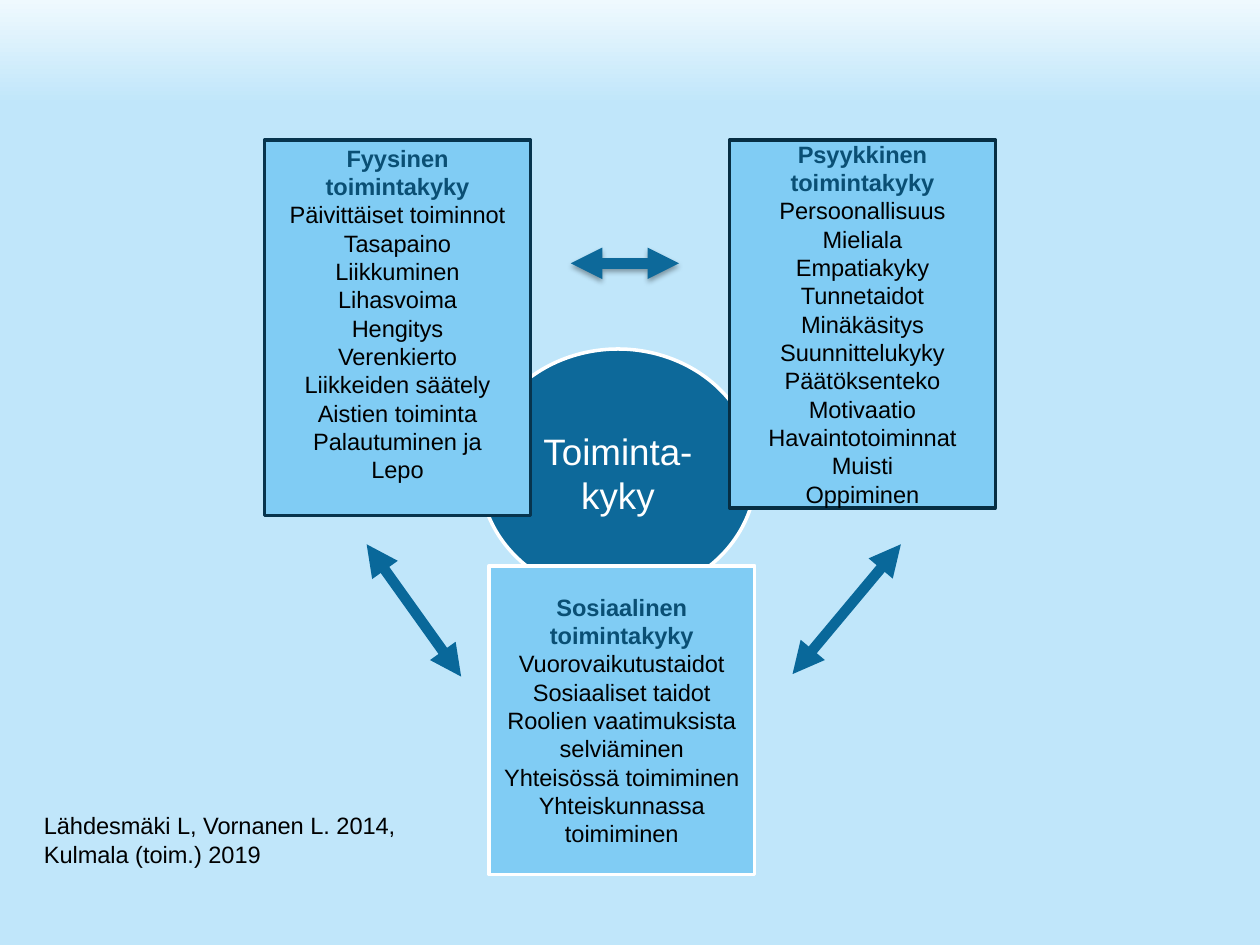
from lxml import etree
from pptx import Presentation
from pptx.dml.color import RGBColor
from pptx.enum.shapes import MSO_CONNECTOR, MSO_SHAPE
from pptx.enum.text import MSO_ANCHOR, MSO_AUTO_SIZE, PP_ALIGN
from pptx.oxml.ns import qn
from pptx.util import Inches, Pt

CIRCLE = MSO_SHAPE.FLOWCHART_CONNECTOR
BOX = MSO_SHAPE.FLOWCHART_PROCESS
STRAIGHT = MSO_CONNECTOR.STRAIGHT
MIDDLE = MSO_ANCHOR.MIDDLE
CENTER = PP_ALIGN.CENTER
LEFT = PP_ALIGN.LEFT
FIT_SHAPE = MSO_AUTO_SIZE.SHAPE_TO_FIT_TEXT

FONT = "Arial"
BODY_SIZE = 13.5
COLORS = {
    "sky_top": "EFF9FE",
    "sky": "C0E6FA",
    "circle": "0D699A",
    "arrow": "09689A",
    "box": "80CCF4",
    "navy": "07344D",
    "dark_navy": "062E43",
    "heading": "0A4F74",
    "white": "FFFFFF",
    "black": "000000",
}


def rgb(name):
    return RGBColor.from_string(COLORS[name])


def write_lines(tf, lines, size, color, align, heading=False):
    """Write one paragraph per line; a heading makes the first one bold."""
    for i, line in enumerate(lines):
        p = tf.paragraphs[0] if i == 0 else tf.add_paragraph()
        p.alignment = align
        r = p.add_run()
        r.text = line
        r.font.name = FONT
        r.font.size = Pt(size)
        r.font.bold = heading and i == 0
        r.font.color.rgb = rgb("heading" if r.font.bold else color)


prs = Presentation()
prs.slide_width, prs.slide_height = Inches(10), Inches(7.5)
s = prs.slides.add_slide(prs.slide_layouts[6])

# Background: fades from near white at the top to sky blue
bg = s.background.fill
bg.gradient()
bg.gradient_angle = 270
for stop, position, color in zip(bg.gradient_stops, (0, 0.11), ("sky_top", "sky")):
    stop.position = position
    stop.color.rgb = rgb(color)

# Central circle and the three areas of functional ability
physical = ["Fyysinen toimintakyky", "Päivittäiset toiminnot", "Tasapaino",
            "Liikkuminen", "Lihasvoima", "Hengitys", "Verenkierto",
            "Liikkeiden säätely", "Aistien toiminta", "Palautuminen ja", "Lepo"]
mental = ["Psyykkinen toimintakyky", "Persoonallisuus", "Mieliala",
          "Empatiakyky", "Tunnetaidot", "Minäkäsitys", "Suunnittelukyky",
          "Päätöksenteko", "Motivaatio", "Havaintotoiminnat", "Muisti",
          "Oppiminen"]
social = ["Sosiaalinen toimintakyky", "Vuorovaikutustaidot",
          "Sosiaaliset taidot", "Roolien vaatimuksista selviäminen",
          "Yhteisössä toimiminen", "Yhteiskunnassa toimiminen"]

# kind, left, top, width, height, fill, line, lines, size, text colour, bottom inset
shapes = [
    (CIRCLE, 3.81, 2.77, 2.19, 1.97, "circle", "white",
     ["Toiminta-", "kyky"], 21, "white", 0.05),
    (BOX, 2.1, 1.11, 2.11, 2.98, "box", "navy", physical, BODY_SIZE, "black", 0.27),
    (BOX, 5.79, 1.11, 2.11, 2.92, "box", "dark_navy", mental, BODY_SIZE, "black", 0.05),
    (BOX, 3.88, 4.49, 2.11, 2.45, "box", "white", social, BODY_SIZE, "black", 0.05),
]
for kind, x, y, w, h, fill, line, lines, size, color, bottom in shapes:
    sp = s.shapes.add_shape(kind, Inches(x), Inches(y), Inches(w), Inches(h))
    sp.shadow.inherit = False
    sp.fill.solid()
    sp.fill.fore_color.rgb = rgb(fill)
    sp.line.color.rgb = rgb(line)
    sp.line.width = Pt(2)
    tf = sp.text_frame
    tf.word_wrap = True
    tf.vertical_anchor = MIDDLE
    tf.margin_bottom = Inches(bottom)
    write_lines(tf, lines, size, color, CENTER, heading=kind == BOX)
    for p in tf.paragraphs:
        if p.text == "Minäkäsitys":  # sits slightly left of centre
            pPr = p._p.get_or_add_pPr()
            pPr.set("marL", "0")
            pPr.set("indent", str(-Inches(0.3)))

# Double-headed arrows between the areas; only the top one casts a shadow
arrows = [
    (4.53, 2.09, 5.39, 2.09, "circle", True),
    (7.15, 4.32, 6.29, 5.35, "arrow", False),
    (3.66, 5.37, 2.91, 4.32, "arrow", False),
]
for x1, y1, x2, y2, color, shadow in arrows:
    cx = s.shapes.add_connector(STRAIGHT, Inches(x1), Inches(y1), Inches(x2), Inches(y2))
    cx.line.color.rgb = rgb(color)
    cx.line.width = Pt(6)
    ln = cx.line._get_or_add_ln()
    for end in ("a:headEnd", "a:tailEnd"):
        etree.SubElement(ln, qn(end), type="triangle")
    effects = etree.SubElement(cx._element.spPr, qn("a:effectLst"))
    if shadow:
        outer = etree.SubElement(effects, qn("a:outerShdw"), blurRad=str(Pt(3.1)),
                                 dist=str(Pt(1.8)), dir="5400000", rotWithShape="0")
        tint = etree.SubElement(outer, qn("a:srgbClr"), val=COLORS["black"])
        etree.SubElement(tint, qn("a:alpha"), val="35000")

# Source reference
tb = s.shapes.add_textbox(Inches(0.25), Inches(6.39), Inches(3.03), Inches(0.56))
tf = tb.text_frame
tf.word_wrap = False
tf.auto_size = FIT_SHAPE
write_lines(tf, ["Lähdesmäki L, Vornanen L. 2014,", "Kulmala (toim.) 2019"],
            BODY_SIZE, "black", LEFT)

prs.save("out.pptx")
